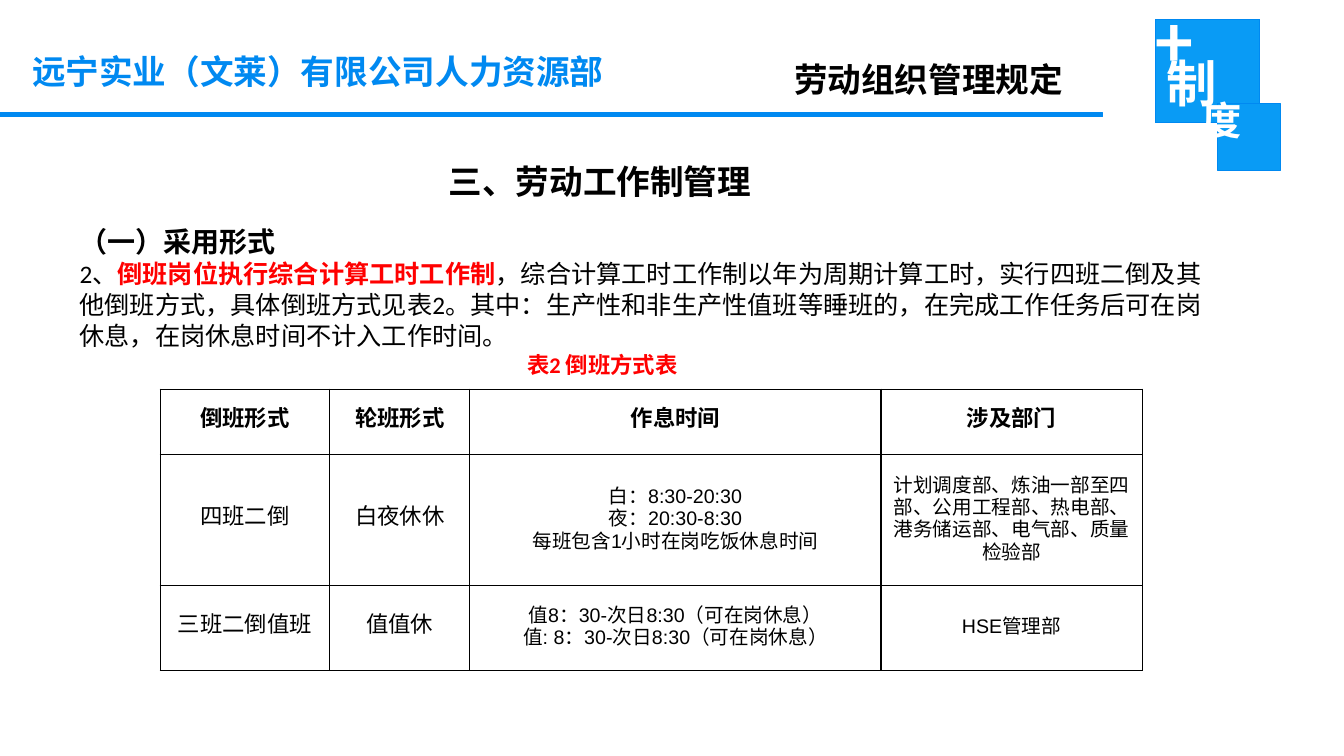
from dataclasses import dataclass

from lxml.etree import SubElement
from pptx import Presentation
from pptx.dml.color import RGBColor
from pptx.enum.shapes import MSO_SHAPE as Shape
from pptx.enum.text import MSO_ANCHOR as Anchor, MSO_AUTO_SIZE as AutoSize, PP_ALIGN as Align
from pptx.oxml.ns import qn
from pptx.util import Inches, Pt

BLUE = RGBColor(0x00, 0x89, 0xF1)
SKY = RGBColor(0x09, 0x9B, 0xF5)
RED = RGBColor(0xFF, 0x00, 0x00)
BLACK = RGBColor(0x00, 0x00, 0x00)
WHITE = RGBColor(0xFF, 0xFF, 0xFF)
CJK = "Noto Sans CJK SC"


@dataclass
class Span:
    text: str
    size: float
    color: RGBColor = BLACK
    bold: bool = True
    font: str = CJK


@dataclass
class Line:
    spans: list
    leading: float
    indent: float = 0
    align: Align = Align.LEFT


class Page:
    def __init__(self, deck):
        self.width, self.height = deck.slide_width, deck.slide_height
        self.slide = deck.slides.add_slide(deck.slide_layouts[5])

    def across(self, share):
        return round(self.width * share / 100)

    def down(self, share):
        return round(self.height * share / 100)

    def area(self, left, top, width, height):
        return self.across(left), self.down(top), self.across(width), self.down(height)

    def block(self, area, fill):
        box = self.slide.shapes.add_shape(Shape.RECTANGLE, *self.area(*area))
        box.shadow.inherit = False
        box.fill.solid()
        box.fill.fore_color.rgb = fill
        box.line.color.rgb = BLUE
        box.line.width = Pt(0.75)

    def fill_text(self, frame, lines):
        frame.text = "\n".join("" for _ in lines)
        for para, line in zip(frame.paragraphs, lines):
            para.alignment = line.align
            para.line_spacing = Pt(line.leading)
            if line.indent:
                para._p.get_or_add_pPr().set("marL", str(self.across(line.indent)))
            for span in line.spans:
                run = para.add_run()
                run.text = span.text
                run.font.size = Pt(span.size)
                run.font.bold = span.bold
                run.font.color.rgb = span.color
                run.font.name = span.font
                SubElement(run.font._element, qn("a:ea")).set("typeface", CJK)

    def text(self, area, lines):
        box = self.slide.shapes.add_textbox(*self.area(*area))
        box.text_frame.word_wrap = True
        self.fill_text(box.text_frame, lines)

    def title(self, area, line):
        box = self.slide.shapes.title
        box.left, box.top, box.width, box.height = self.area(*area)
        frame = box.text_frame
        frame.auto_size = AutoSize.NONE
        frame.vertical_anchor = Anchor.TOP
        self.fill_text(frame, [line])

    def border(self, cell):
        props = cell._tc.get_or_add_tcPr()
        for index, side in enumerate(("a:lnL", "a:lnR", "a:lnT", "a:lnB")):
            edge = props.makeelement(qn(side), {"w": str(Pt(1))})
            fill = SubElement(edge, qn("a:solidFill"))
            SubElement(fill, qn("a:srgbClr")).set("val", str(BLACK))
            props.insert(index, edge)

    def table(self, left, top, columns, rows, content):
        area = self.area(left, top, sum(columns), sum(rows))
        table = self.slide.shapes.add_table(len(rows), len(columns), *area).table
        for column, share in zip(table.columns, columns):
            column.width = self.across(share)
        for row, share in zip(table.rows, rows):
            row.height = self.down(share)
        for y, texts in enumerate(content):
            for x, text in enumerate(texts):
                cell = table.cell(y, x)
                cell.fill.background()
                cell.vertical_anchor = Anchor.MIDDLE
                cell.margin_left = cell.margin_right = Inches(0.07)
                cell.margin_top = cell.margin_bottom = 0
                size = 14 if y > 0 and x > 1 else 16
                self.fill_text(cell.text_frame, [
                    Line([Span(part, size, bold=y == 0, font="Arial")], 16, align=Align.CENTER)
                    for part in text.split("\n")])
                self.border(cell)


def main():
    deck = Presentation()
    deck.slide_width, deck.slide_height = Inches(13.33), Inches(7.5)
    page = Page(deck)

    page.block((0, 14.93, 82.05, 0.53), BLUE)
    page.block((85.95, 2.53, 7.8, 13.73), SKY)
    page.block((90.6, 13.73, 4.65, 8.8), SKY)
    page.text((85.13, 6.13, 11.7, 13.73), [
        Line([Span("+", 48, WHITE, font="Noto Sans CJK JP")], 22),
        Line([Span("制", 36, WHITE)], 22, 0.9),
        Line([Span("度", 28, WHITE)], 22, 3.6),
    ])

    page.text((1.65, 5.47, 67.2, 6.67),
              [Line([Span("远宁实业（文莱）有限公司人力资源部", 24, BLUE)], 32)])
    page.text((58.35, 6.53, 34.95, 6.67), [Line([Span("劳动组织管理规定", 24)], 32)])
    page.title((32.63, 20, 38.48, 6.67), Line([Span("三、劳动工作制管理", 24)], 32))

    page.text((5.18, 26.8, 85.05, 27.33), [
        Line([Span("（一）采用形式", 20)], 36),
        Line([
            Span("2、", 18, bold=False, font="Calibri"),
            Span("倒班岗位执行综合计算工时工作制", 18, RED, font="Calibri"),
            Span("，综合计算工时工作制以年为周期计算工时，实行四班二倒及其他倒班方式，"
                 "具体倒班方式见表2。其中：生产性和非生产性值班等睡班的，"
                 "在完成工作任务后可在岗休息，在岗休息时间不计入工作时间。",
                 18, bold=False, font="Calibri"),
        ], 22),
        Line([Span("表2 倒班方式表", 16, RED, font="Calibri")], 19.5, 33.3),
    ])

    page.table(11.93, 51.47, (12.6, 10.43, 30.6, 19.43), (8.67, 17.33, 11.2), [
        ("倒班形式", "轮班形式", "作息时间", "涉及部门"),
        ("四班二倒", "白夜休休",
         "白：8:30-20:30\n夜：20:30-8:30\n每班包含1小时在岗吃饭休息时间",
         "计划调度部、炼油一部至四部、公用工程部、热电部、港务储运部、电气部、质量检验部"),
        ("三班二倒值班", "值值休",
         "值8：30-次日8:30（可在岗休息）\n值: 8：30-次日8:30（可在岗休息）",
         "HSE管理部"),
    ])

    deck.save("out.pptx")


if __name__ == "__main__":
    main()
